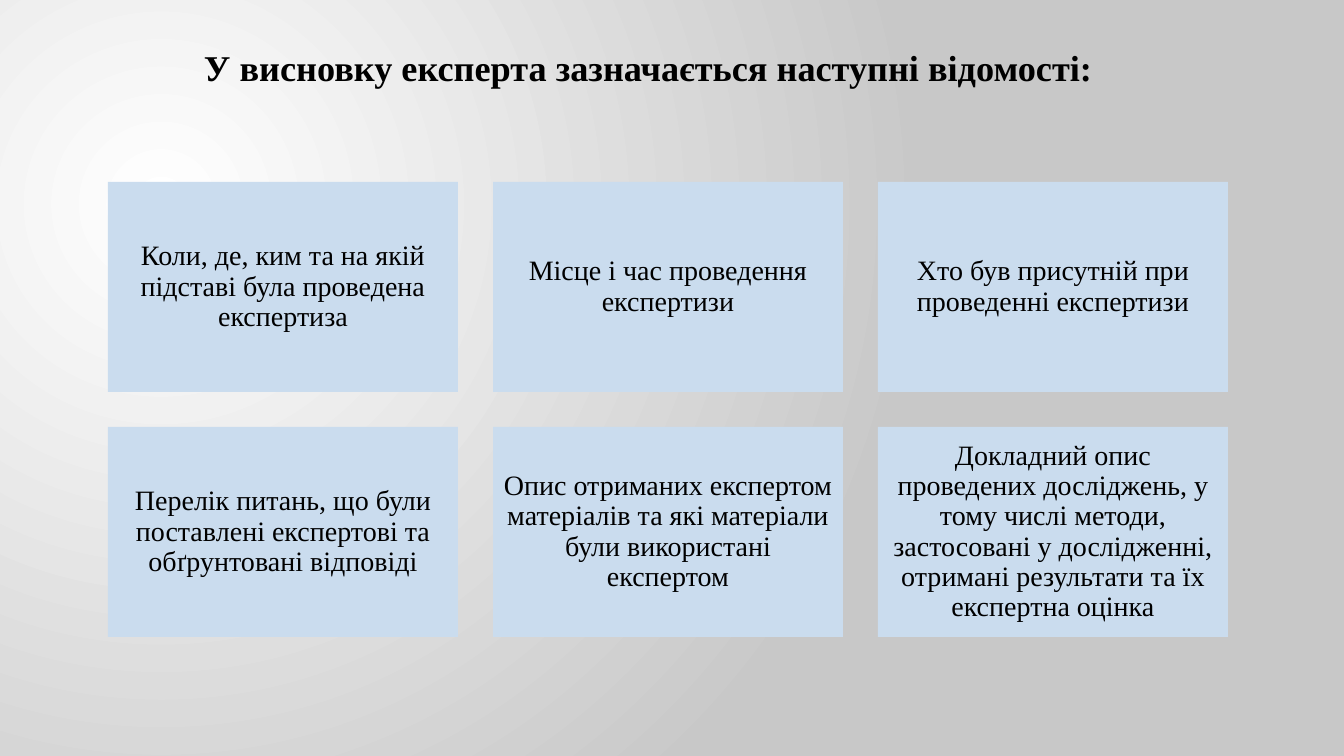
from dataclasses import dataclass

from lxml import etree
from pptx import Presentation
from pptx.dml.color import RGBColor as Rgb
from pptx.enum.shapes import MSO_SHAPE as Kind
from pptx.enum.text import MSO_ANCHOR as Anchor, PP_ALIGN as Align
from pptx.oxml import parse_xml
from pptx.oxml.ns import nsdecls, qn
from pptx.shapes.autoshape import Shape
from pptx.slide import Slide
from pptx.util import Emu, Pt

WIDE, HIGH = 1344, 756
SCALE = 12192000 / WIDE


@dataclass(frozen=True)
class Theme:
    font: str = "Times New Roman"
    ink: str = "000000"
    card: str = "CADCEE"
    glow: str = "FFFFFF"
    edge: str = "C8C8C8"
    head: float = 25.9
    body: float = 20


@dataclass(frozen=True)
class Box:
    left: int
    top: int
    width: int
    height: int

    def emu(self) -> list[Emu]:
        return [px(n) for n in (self.left, self.top, self.width, self.height)]


@dataclass(frozen=True)
class Card:
    text: str
    box: Box


THEME = Theme()
TITLE = "У висновку експерта зазначається наступні відомості:"
FACTS = (
    "Коли, де, ким та на якій підставі була проведена експертиза",
    "Місце і час проведення експертизи",
    "Хто був присутній при проведенні експертизи",
    "Перелік питань, що були поставлені експертові та обґрунтовані відповіді",
    "Опис отриманих експертом матеріалів та які матеріали були використані експертом",
    "Докладний опис проведених досліджень, у тому числі методи, застосовані "
    "у дослідженні, отримані результати та їх експертна оцінка",
)
COLS, GAP = 3, 35
FIRST = Box(108, 182, 350, 210)


def px(count: int) -> Emu:
    return Emu(round(count * SCALE))


def write(shape: Shape, text: str, *, size: float, bold: bool = False,
          align: Align = Align.LEFT, anchor: Anchor = Anchor.TOP,
          line: float = 1.0, pad: tuple[int, int] = (8, 8)) -> None:
    """Fill a shape with one paragraph; pad is the side and top inset in px."""
    frame = shape.text_frame
    frame.word_wrap = True
    frame.vertical_anchor = anchor
    frame.margin_left = frame.margin_right = px(pad[0])
    frame.margin_top = frame.margin_bottom = px(pad[1])
    para = frame.paragraphs[0]
    para.alignment = align
    para.line_spacing = line
    run = para.add_run()
    run.text = text
    run.font.name = THEME.font
    run.font.size = Pt(size)
    run.font.bold = bold
    run.font.color.rgb = Rgb.from_string(THEME.ink)


def paint(slide: Slide) -> None:
    """Give the slide a round glow spreading from the upper left."""
    fill = slide.background.fill
    fill.gradient()
    for stop, tone, place in zip(fill.gradient_stops, (THEME.glow, THEME.edge), (0, 1)):
        stop.color.rgb = Rgb.from_string(tone)
        stop.position = place
    grad: etree.ElementBase = next(slide.element.iter(qn("a:gradFill")))
    grad.replace(grad.find(qn("a:lin")), parse_xml(
        f'<a:path {nsdecls("a")} path="circle">'
        '<a:fillToRect l="50000" t="55000" r="125000" b="100000"/></a:path>'))


def draw(slide: Slide, card: Card) -> None:
    shape = slide.shapes.add_shape(Kind.RECTANGLE, *card.box.emu())
    shape.shadow.inherit = False
    shape.fill.solid()
    shape.fill.fore_color.rgb = Rgb.from_string(THEME.card)
    shape.line.fill.background()
    write(shape, card.text, size=THEME.body, align=Align.CENTER,
          anchor=Anchor.MIDDLE, line=0.9)


def grid() -> list[Card]:
    cards = []
    for i, text in enumerate(FACTS):
        row, col = divmod(i, COLS)
        left = FIRST.left + col * (FIRST.width + GAP)
        top = FIRST.top + row * (FIRST.height + GAP)
        cards.append(Card(text, Box(left, top, FIRST.width, FIRST.height)))
    return cards


def main() -> None:
    deck = Presentation()
    deck.slide_width, deck.slide_height = px(WIDE), px(HIGH)
    slide = deck.slides.add_slide(deck.slide_layouts[6])
    paint(slide)
    title = slide.shapes.add_textbox(*Box(194, 35, 948, 75).emu())
    write(title, TITLE, size=THEME.head, bold=True, pad=(10, 10))
    for card in grid():
        draw(slide, card)
    deck.save("out.pptx")


if __name__ == "__main__":
    main()
